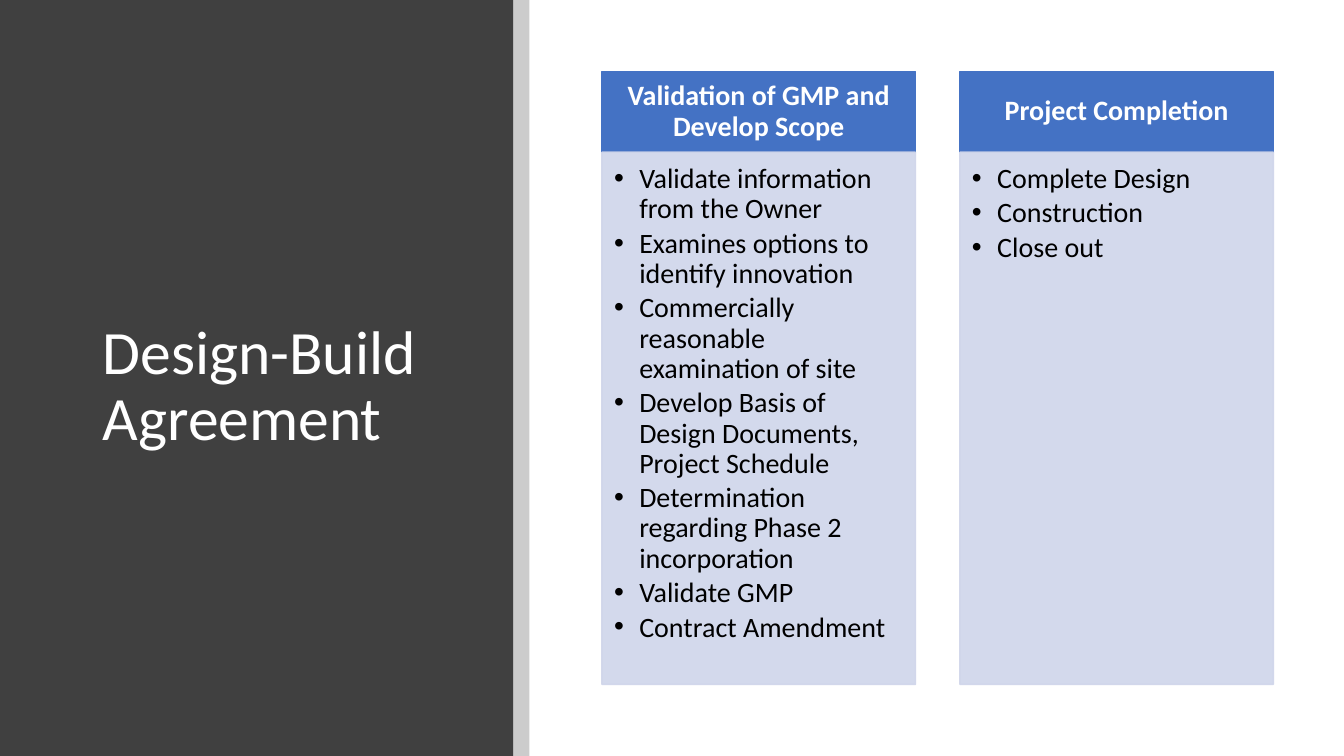
from lxml import etree
from pptx import Presentation
from pptx import util as u
from pptx.dml.color import RGBColor
from pptx.enum import shapes, text
from pptx.oxml.ns import qn

TITLE = "Design-Build Agreement"
PHASES = [
    ("Validation of GMP and Develop Scope", [
        "Validate information from the Owner",
        "Examines options to identify innovation",
        "Commercially reasonable examination of site",
        "Develop Basis of Design Documents, Project Schedule",
        "Determination regarding Phase 2 incorporation",
        "Validate GMP",
        "Contract Amendment",
    ]),
    ("Project Completion", ["Complete Design", "Construction", "Close out"]),
]
SLIDE_W, SLIDE_H = 13.33, 7.5
PANEL_W, STRIP_W = 5.09, 0.16
COLUMN_LEFT, COLUMN_TOP, COLUMN_W, COLUMN_STEP = 5.97, 0.71, 3.11, 3.55
HEADER_H, BODY_H = 0.8, 5.28

TITLE_STYLE = dict(size=44, color="FFFFFF", bold=False, align=text.PP_ALIGN.LEFT,
                   anchor=text.MSO_ANCHOR.MIDDLE, insets=(0.1, 0.05, 0.1, 0.05), after=0)
HEADER_STYLE = dict(size=20, color="FFFFFF", bold=True, align=text.PP_ALIGN.CENTER,
                    anchor=text.MSO_ANCHOR.MIDDLE, insets=(0.16, 0.09, 0.16, 0.09), after=0)
BODY_STYLE = dict(size=20, color="000000", bold=False, align=text.PP_ALIGN.LEFT,
                  anchor=text.MSO_ANCHOR.TOP, insets=(0.12, 0.12, 0.16, 0.17), after=3)


def paint(target, color):
    target.rgb = RGBColor.from_string(color)


def set_all(target, values):
    for name, value in values.items():
        setattr(target, name, value)


def add_box(page, place, color, opacity=100, outlined=False):
    box = page.shapes.add_shape(shapes.MSO_SHAPE.RECTANGLE, *map(u.Inches, place))
    box.shadow.inherit = False
    box.fill.solid()
    paint(box.fill.fore_color, color)
    if outlined:
        paint(box.line.color, color)
        box.line.width = u.Pt(1)
    else:
        box.line.fill.background()
    if opacity < 100:
        for tone in list(box.element.spPr.iter(qn("a:srgbClr"))):
            etree.SubElement(tone, qn("a:alpha"), val=str(opacity * 1000))
    return box


def add_bullet(para):
    props = para._p.get_or_add_pPr()
    props.set("marL", str(u.Inches(0.25)))
    props.set("indent", str(u.Inches(-0.25)))
    etree.SubElement(props, qn("a:buFont"), typeface="Arial")
    etree.SubElement(props, qn("a:buChar"), char="•")


def write(box, lines, style, bulleted=False):
    frame = box.text_frame
    sides = ("margin_left", "margin_top", "margin_right", "margin_bottom")
    set_all(frame, dict(zip(sides, map(u.Inches, style["insets"]))))
    set_all(frame, dict(word_wrap=True, vertical_anchor=style["anchor"]))
    for index, line in enumerate(lines):
        para = frame.add_paragraph() if index else frame.paragraphs[0]
        set_all(para, dict(alignment=style["align"], line_spacing=0.9,
                           space_after=u.Pt(style["after"])))
        if bulleted:
            add_bullet(para)
        span = para.add_run()
        span.text = line
        set_all(span.font, dict(name="Calibri", size=u.Pt(style["size"]), bold=style["bold"]))
        paint(span.font.color, style["color"])


def main():
    deck = Presentation()
    set_all(deck, dict(slide_width=u.Inches(SLIDE_W), slide_height=u.Inches(SLIDE_H)))
    page = deck.slides.add_slide(deck.slide_layouts[6])

    add_box(page, (0, 0, PANEL_W, SLIDE_H), "404040")
    title = page.shapes.add_textbox(*map(u.Inches, (0.92, 0.89, 3.65, 5.91)))
    write(title, [TITLE], TITLE_STYLE)
    add_box(page, (PANEL_W, 0, STRIP_W, SLIDE_H), "000000", opacity=20)

    for index, (heading, steps) in enumerate(PHASES):
        left = COLUMN_LEFT + index * COLUMN_STEP
        header = add_box(page, (left, COLUMN_TOP, COLUMN_W, HEADER_H), "4472C4", outlined=True)
        write(header, [heading], HEADER_STYLE)
        body = add_box(page, (left, COLUMN_TOP + HEADER_H, COLUMN_W, BODY_H), "CFD5EA",
                       opacity=90, outlined=True)
        write(body, steps, BODY_STYLE, bulleted=True)

    deck.save("out.pptx")


if __name__ == "__main__":
    main()
